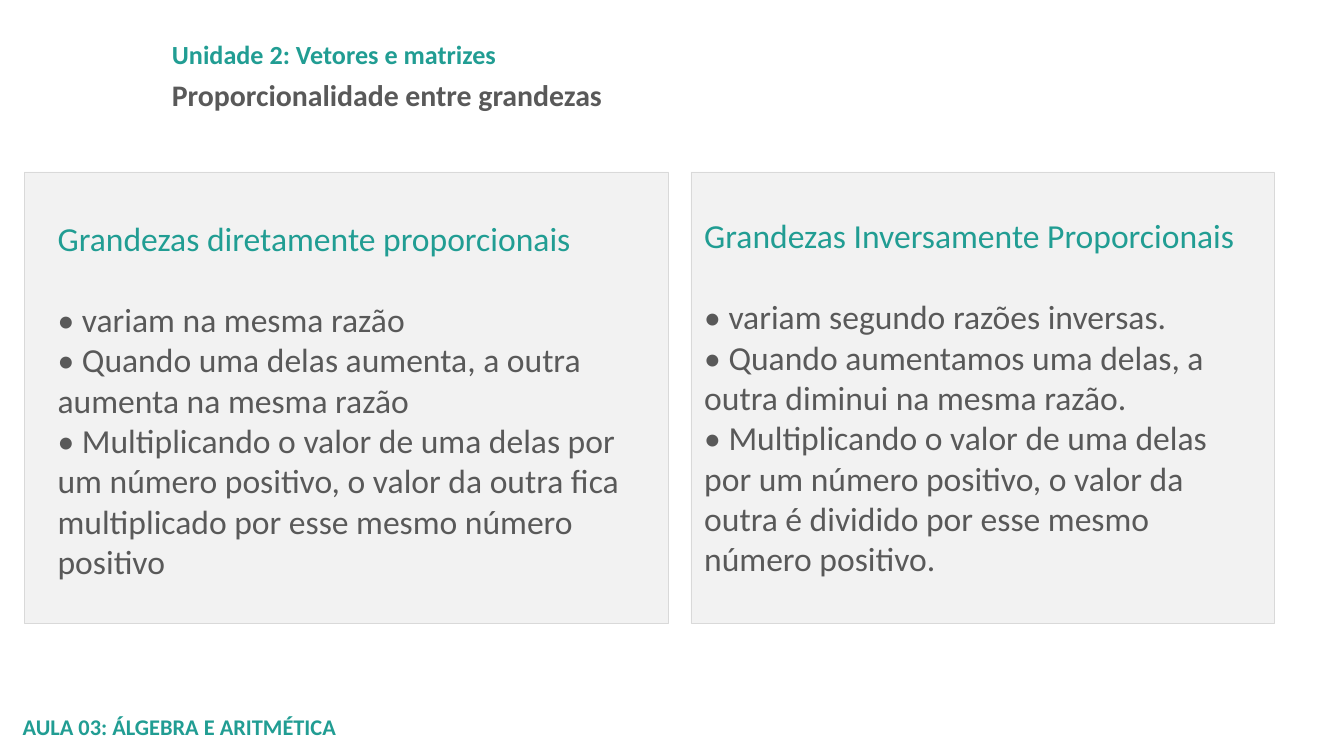
from pptx import Presentation
from pptx.dml.color import RGBColor
from pptx.enum.shapes import MSO_SHAPE
from pptx.enum.text import MSO_AUTO_SIZE
from pptx.util import Cm, Pt

COLORS = {"teal": "219D93", "gray": "595959", "panel": "F2F2F2", "border": "D9D9D9"}

HEADINGS = [
    ("Unidade 2: Vetores e matrizes", (3, 0.61, 6.68, 0.86), 14, "teal"),
    ("Proporcionalidade entre grandezas", (3, 1.32, 8.76, 0.94), 16, "gray"),
    ("AULA 03: ÁLGEBRA E ARITMÉTICA", (0.18, 13.36, 6.53, 0.76), 12, "teal"),
]

PANELS = [
    {
        "left": 0.46, "width": 12.17, "inset": 0.38, "text_top": 3.99,
        "title": "Grandezas diretamente proporcionais",
        "points": [
            "• variam na mesma razão",
            "• Quando uma delas aumenta, a outra aumenta na mesma razão",
            "• Multiplicando o valor de uma delas por um número positivo, "
            "o valor da outra fica multiplicado por esse mesmo número positivo",
        ],
    },
    {
        "left": 13.06, "width": 11.02, "inset": 0, "text_top": 3.94,
        "title": "Grandezas Inversamente Proporcionais",
        "points": [
            "• variam segundo razões inversas.",
            "• Quando aumentamos uma delas, a outra diminui na mesma razão.",
            "• Multiplicando o valor de uma delas por um número positivo, "
            "o valor da outra é dividido por esse mesmo número positivo.",
        ],
    },
]
PANEL_TOP, PANEL_HEIGHT, TEXT_HEIGHT = 3.25, 8.53, 7.19
PANEL_SIZE, TITLE_GAP = 18, 22


def color(name):
    return RGBColor.from_string(COLORS[name])


def add_text(shapes, box, lines, size, bold=False, wrap=True):
    frame = shapes.add_textbox(*map(Cm, box)).text_frame
    frame.word_wrap = wrap
    frame.auto_size = MSO_AUTO_SIZE.SHAPE_TO_FIT_TEXT
    for index, (text, color_name) in enumerate(lines):
        paragraph = frame.add_paragraph() if index else frame.paragraphs[0]
        if index == 1:
            paragraph.space_before = Pt(TITLE_GAP)
        run = paragraph.add_run()
        run.text = text
        font_format = {"name": "Calibri", "size": Pt(size), "bold": bold}
        for attribute, value in font_format.items():
            setattr(run.font, attribute, value)
        run.font.color.rgb = color(color_name)


def add_panel(slide, panel):
    shapes = slide.shapes.add_group_shape().shapes
    left, width, inset = panel["left"], panel["width"], panel["inset"]
    card_box = (left, PANEL_TOP, width, PANEL_HEIGHT)
    card = shapes.add_shape(MSO_SHAPE.RECTANGLE, *map(Cm, card_box))
    card.shadow.inherit = False
    card.fill.solid()
    card.fill.fore_color.rgb = color("panel")
    card.line.color.rgb = color("border")
    card.line.width = Pt(0.25)
    lines = [(panel["title"], "teal")] + [(point, "gray") for point in panel["points"]]
    text_box = (left + inset, panel["text_top"], width - 2 * inset, TEXT_HEIGHT)
    add_text(shapes, text_box, lines, PANEL_SIZE)


def main():
    presentation = Presentation()
    presentation.slide_width, presentation.slide_height = Cm(25.4), Cm(14.29)
    slide = presentation.slides.add_slide(presentation.slide_layouts[6])
    for text, box, size, color_name in HEADINGS:
        add_text(slide.shapes, box, [(text, color_name)], size, bold=True, wrap=False)
    for panel in PANELS:
        add_panel(slide, panel)
    presentation.save("out.pptx")


if __name__ == "__main__":
    main()
